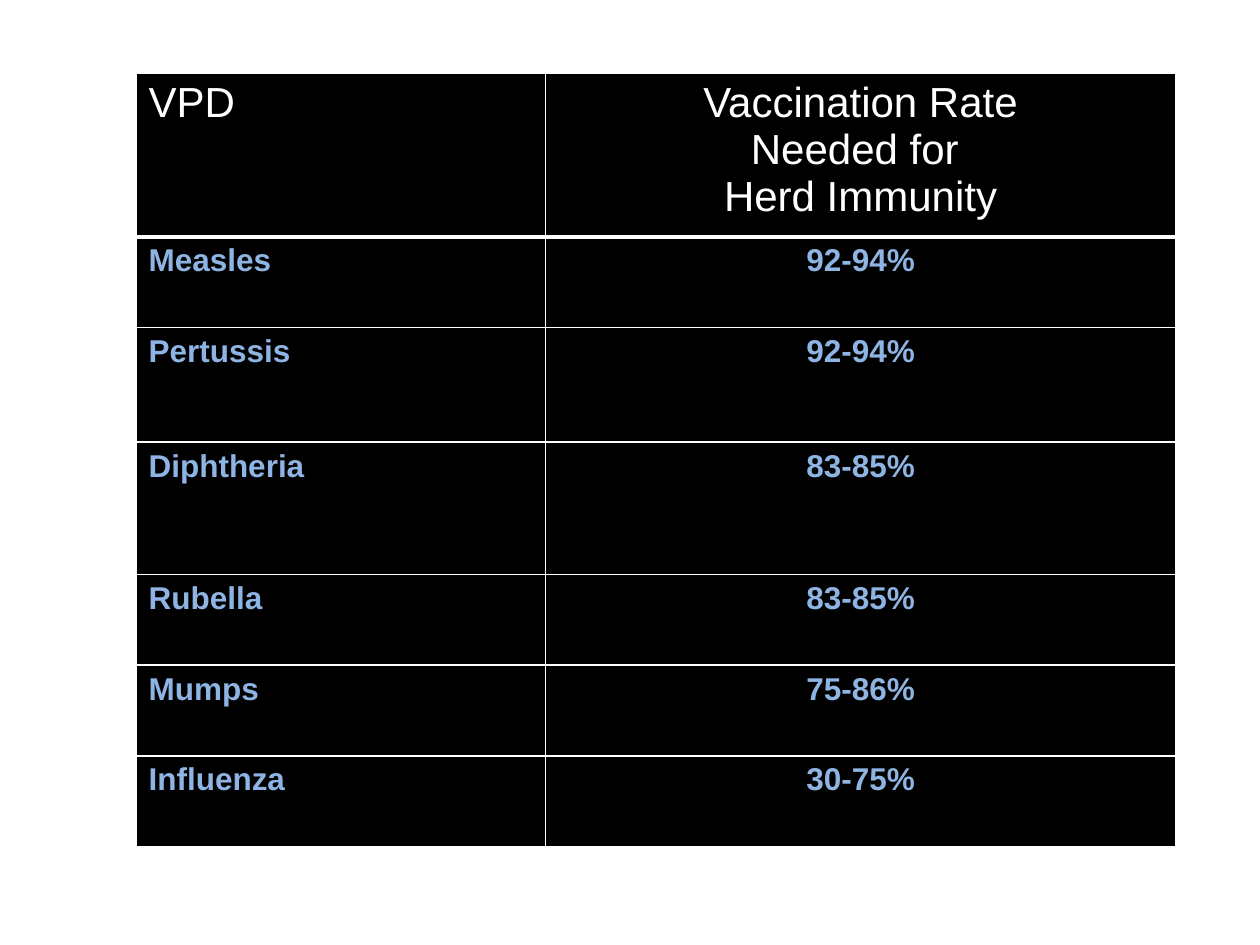
from dataclasses import dataclass

from lxml import etree
from pptx import Presentation
from pptx.dml.color import RGBColor
from pptx.enum.text import PP_ALIGN
from pptx.oxml.ns import qn
from pptx.util import Inches, Pt

LEFT, CENTER = PP_ALIGN.LEFT, PP_ALIGN.CENTER
BLACK = RGBColor(0x00, 0x00, 0x00)
WHITE = RGBColor(0xFF, 0xFF, 0xFF)
LIGHT_BLUE = RGBColor(0x8E, 0xB4, 0xE3)

SLIDE_W, SLIDE_H = 10, 7.5
TABLE_LEFT, TABLE_TOP = 1.08, 0.58
COL_WIDTHS = (3.25, 5)
ALIGNMENTS = (LEFT, CENTER)
HEADER_FONT = {"name": "Arial", "size": Pt(24), "bold": False}
BODY_FONT = {"name": "Arial", "size": Pt(18), "bold": True}
ROW_H = 0.72


@dataclass
class Row:
    disease: str
    rate: str
    height: float = ROW_H


HEADER = Row("VPD", "Vaccination Rate\nNeeded for \nHerd Immunity", 1.3)
DISEASES = [
    Row("Measles", "92-94%"),
    Row("Pertussis", "92-94%", 0.91),
    Row("Diphtheria", "83-85%", 1.05),
    Row("Rubella", "83-85%"),
    Row("Mumps", "75-86%"),
    Row("Influenza", "30-75%"),
]


def set_borders(cell, bottom: float) -> None:
    """Draw white borders, 1 pt wide except for the bottom one."""
    tc_pr = cell._tc.get_or_add_tcPr()
    for side, width in {"L": 1, "R": 1, "T": 1, "B": bottom}.items():
        ln = etree.SubElement(tc_pr, qn(f"a:ln{side}"), w=str(Pt(width)))
        fill = etree.SubElement(ln, qn("a:solidFill"))
        etree.SubElement(fill, qn("a:srgbClr"), val=str(WHITE))


def fill_cell(cell, text: str, align: PP_ALIGN, font: dict, color: RGBColor) -> None:
    cell.fill.solid()
    cell.fill.fore_color.rgb = BLACK
    cell.text = text
    for p in cell.text_frame.paragraphs:
        p.alignment = align
        for r in p.runs:
            for name, value in font.items():
                setattr(r.font, name, value)
            r.font.color.rgb = color


def add_rate_table(s, rows: list[Row]) -> None:
    height = sum(row.height for row in rows)
    table = s.shapes.add_table(
        len(rows), len(COL_WIDTHS), Inches(TABLE_LEFT), Inches(TABLE_TOP),
        Inches(sum(COL_WIDTHS)), Inches(height)).table
    table.horz_banding = False
    for column, width in zip(table.columns, COL_WIDTHS):
        column.width = Inches(width)
    for i, row in enumerate(rows):
        table.rows[i].height = Inches(row.height)
        is_header = i == 0
        font, color = (HEADER_FONT, WHITE) if is_header else (BODY_FONT, LIGHT_BLUE)
        for j, text in enumerate((row.disease, row.rate)):
            cell = table.cell(i, j)
            set_borders(cell, bottom=3 if is_header else 1)
            fill_cell(cell, text, ALIGNMENTS[j], font, color)


def main() -> None:
    prs = Presentation()
    prs.slide_width, prs.slide_height = Inches(SLIDE_W), Inches(SLIDE_H)
    s = prs.slides.add_slide(prs.slide_layouts[6])
    add_rate_table(s, [HEADER, *DISEASES])
    prs.save("out.pptx")


if __name__ == "__main__":
    main()
